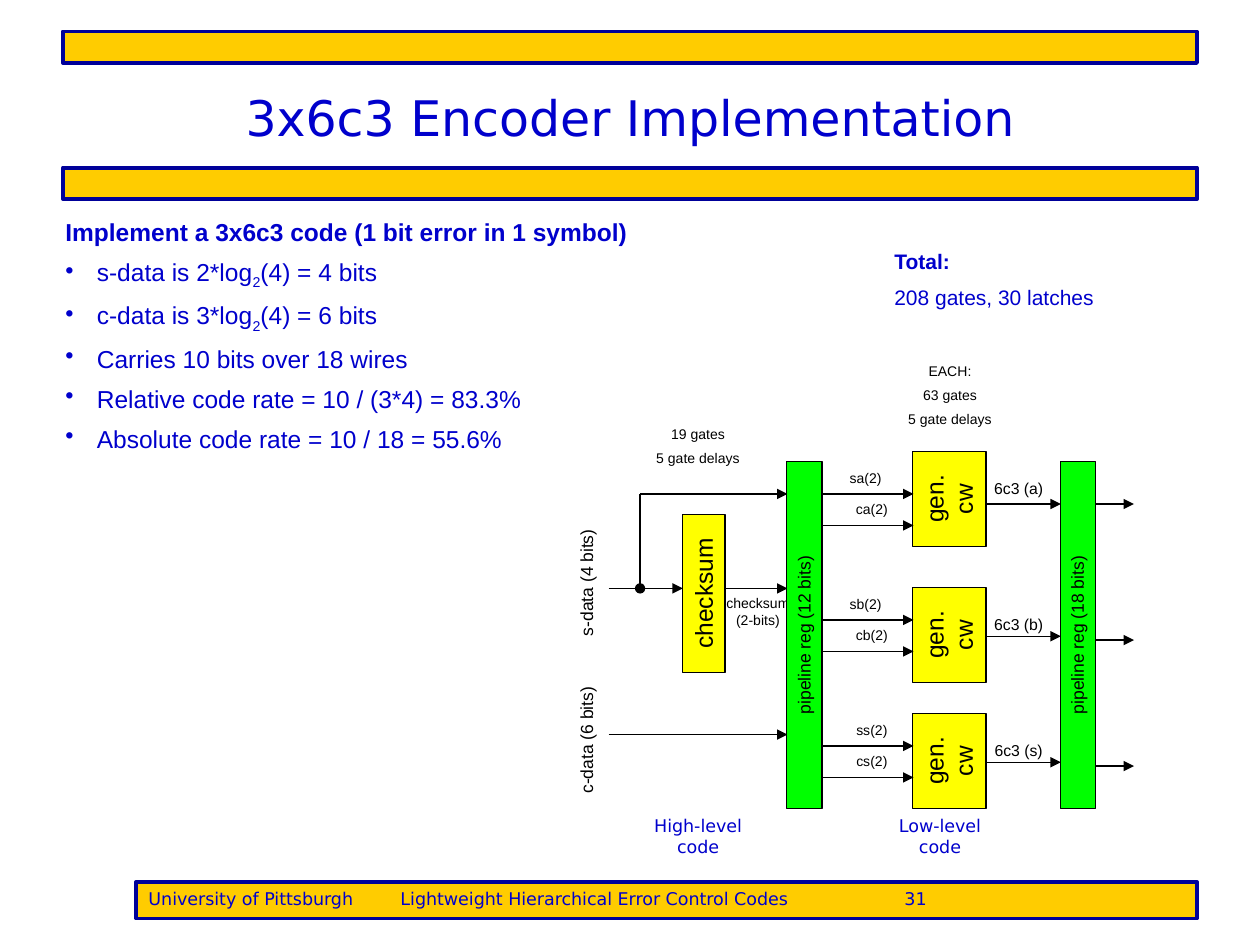
from pptx import Presentation
from pptx.dml.color import RGBColor
from pptx.enum.shapes import MSO_CONNECTOR, MSO_SHAPE
from pptx.enum.text import MSO_ANCHOR, PP_ALIGN
from pptx.oxml.ns import qn
from pptx.util import Inches, Pt
from lxml import etree

RECT = MSO_SHAPE.RECTANGLE
LINE = MSO_CONNECTOR.STRAIGHT
LEFT, MID = PP_ALIGN.LEFT, PP_ALIGN.CENTER
TOP, CORE = MSO_ANCHOR.TOP, MSO_ANCHOR.MIDDLE

THEME = {
    "ink": RGBColor(0, 0, 0),
    "blue": RGBColor(0, 0, 0xCC),
    "navy": RGBColor(0, 0, 0x99),
    "gold": RGBColor(0xFF, 0xCC, 0),
    "yellow": RGBColor(0xFF, 0xFF, 0),
    "green": RGBColor(0, 0xFF, 0),
    "sans": "Arial",
    "head": "DejaVu Sans",
    "title": 28, "body": 14, "total": 12, "label": 10, "code": 9, "note": 8,
}

deck = Presentation()
deck.slide_width, deck.slide_height = Inches(10), Inches(7.5)
slide = deck.slides.add_slide(deck.slide_layouts[6])


def box(text, x, y, w, h, size="label", ink="ink", font="sans", align=MID,
        fill=None, edge="ink", width=0.75, turn=0, anchor=TOP, gap=0):
    place = [Inches(v) for v in (x, y, w, h)]
    if fill:
        item = slide.shapes.add_shape(RECT, *place)
        item.shadow.inherit = False
        item.fill.solid()
        item.fill.fore_color.rgb = THEME[fill]
        item.line.color.rgb = THEME[edge]
        item.line.width = Pt(width)
    else:
        item = slide.shapes.add_textbox(*place)
    item.rotation = turn
    frame = item.text_frame
    frame.word_wrap = True
    frame.vertical_anchor = anchor
    frame.text = text
    for i, para in enumerate(frame.paragraphs):
        para.alignment = align
        para.space_before = Pt(gap if i else 0)
        for run in para.runs:
            run.font.size = Pt(THEME[size])
            run.font.name = THEME[font]
            run.font.color.rgb = THEME[ink]
    return frame


def arrow(x1, y1, x2, y2, end="tailEnd", kind="triangle"):
    wire = slide.shapes.add_connector(LINE, *[Inches(v) for v in (x1, y1, x2, y2)])
    wire.line.color.rgb = THEME["ink"]
    wire.line.width = Pt(0.75)
    tip = etree.SubElement(wire.line._get_or_add_ln(), qn("a:" + end))
    tip.set("type", kind)
    etree.SubElement(wire._element.spPr, qn("a:effectLst"))


for y in (1.33, 0.25):
    box("", 0.5, y, 9, 0.25, fill="gold", edge="navy", width=2.25)
foot = box("University of Pittsburgh\tLightweight Hierarchical Error Control Codes\t31",
           1.08, 7, 8.42, 0.29, ink="blue", font="head", align=LEFT,
           fill="gold", edge="navy", width=2.25)
tabs = etree.SubElement(foot.paragraphs[0]._p.get_or_add_pPr(), qn("a:tabLst"))
for stop in (2, 6):
    etree.SubElement(tabs, qn("a:tab"), pos=str(Inches(stop)), algn="l")
box("3x6c3 Encoder Implementation", 0.5, 0.3, 9, 1.25, "title", "blue", "head", anchor=CORE)

for text, y in (("s-data (4 bits)", 4.49), ("c-data (6 bits)", 5.74)):
    box(text, 4.03, y, 1.25, 0.27, turn=270)
box("checksum", 4.96, 4.54, 1.25, 0.34, "body", fill="yellow", turn=270)
arrow(4.83, 4.67, 5.42, 4.67)
arrow(5.75, 4.67, 6.25, 4.67)
arrow(5.08, 4.67, 5.08, 3.92, "headEnd", "oval")
arrow(5.08, 3.92, 6.25, 3.92)
arrow(4.83, 5.83, 6.25, 5.83)
box("checksum (2-bits)", 5.64, 4.67, 0.75, 0.37, "note")
box("19 gates\n5 gate delays", 5, 3.33, 1.08, 0.44, "note", gap=4)
box("EACH:\n63 gates\n5 gate delays", 7, 2.83, 1.08, 0.64, "note", gap=4)

lanes = (
    ("a", 6.58, 0.58, 3.67, 4, 3.75, 4),
    ("b", 6.58, 0.58, 4.75, 5.05, 4.83, 5.08),
    ("s", 6.67, 0.5, 5.75, 6.05, 5.83, 6.08),
)
for i, (name, x, w, gen, mid, tag, out) in enumerate(lanes):
    box("gen. cw", 7.16, gen, 0.75, 0.58, "body", fill="yellow", turn=270)
    arrow(6.5, 3.92 + i, 7.25, 3.92 + i)
    arrow(6.5, 4.17 + i, 7.25, 4.17 + i)
    box(f"s{name}(2)", x, 3.68 + i, w, 0.23, "note")
    box(f"c{name}(2)", 6.67, 3.92 + i, 0.5, 0.23, "note")
    arrow(7.83, mid, 8.42, mid)
    box(f"6c3 ({name})", 7.75, tag, 0.67, 0.25, "code")
    arrow(8.67, out, 9, out)

for bits, x in ((12, 5.01), (18, 7.18)):
    box(f"pipeline reg ({bits} bits)", x, 4.9, 2.75, 0.28, fill="green", turn=270)

lines = (
    ["Implement a 3x6c3 code (1 bit error in 1 symbol)"],
    ["s-data is 2*log", "2", "(4) = 4 bits"],
    ["c-data is 3*log", "2", "(4) = 6 bits"],
    ["Carries 10 bits over 18 wires"],
    ["Relative code rate = 10 / (3*4) = 83.3%"],
    ["Absolute code rate = 10 / 18 = 55.6%"],
)
body = box("", 0.42, 1.67, 4.92, 1.97)
for i, parts in enumerate(lines):
    para = body.add_paragraph() if i else body.paragraphs[0]
    para.alignment = LEFT
    para.space_after = Pt(6)
    props = para._p.get_or_add_pPr()
    props.set("marL", str(Inches(0.25)))
    props.set("indent", str(Inches(-0.25)))
    if i:
        etree.SubElement(props, qn("a:buChar"), char="•")
    for j, part in enumerate(parts):
        run = para.add_run()
        run.text = part
        run.font.size = Pt(THEME["body"])
        run.font.name = THEME["sans"]
        run.font.color.rgb = THEME["blue"]
        run.font.bold = i == 0
        if j == 1:
            run._r.get_or_add_rPr().set("baseline", "-25000")

total = box("Total:\n208 gates, 30 latches", 7, 1.92, 2.17, 0.6, "total", "blue",
            align=LEFT, gap=6.5)
total.paragraphs[0].runs[0].font.bold = True
for text, x in (("High-level code", 5), ("Low-level code", 6.92)):
    box(text, x, 6.42, 1.08, 0.43, ink="blue", font="head")

deck.save("out.pptx")
